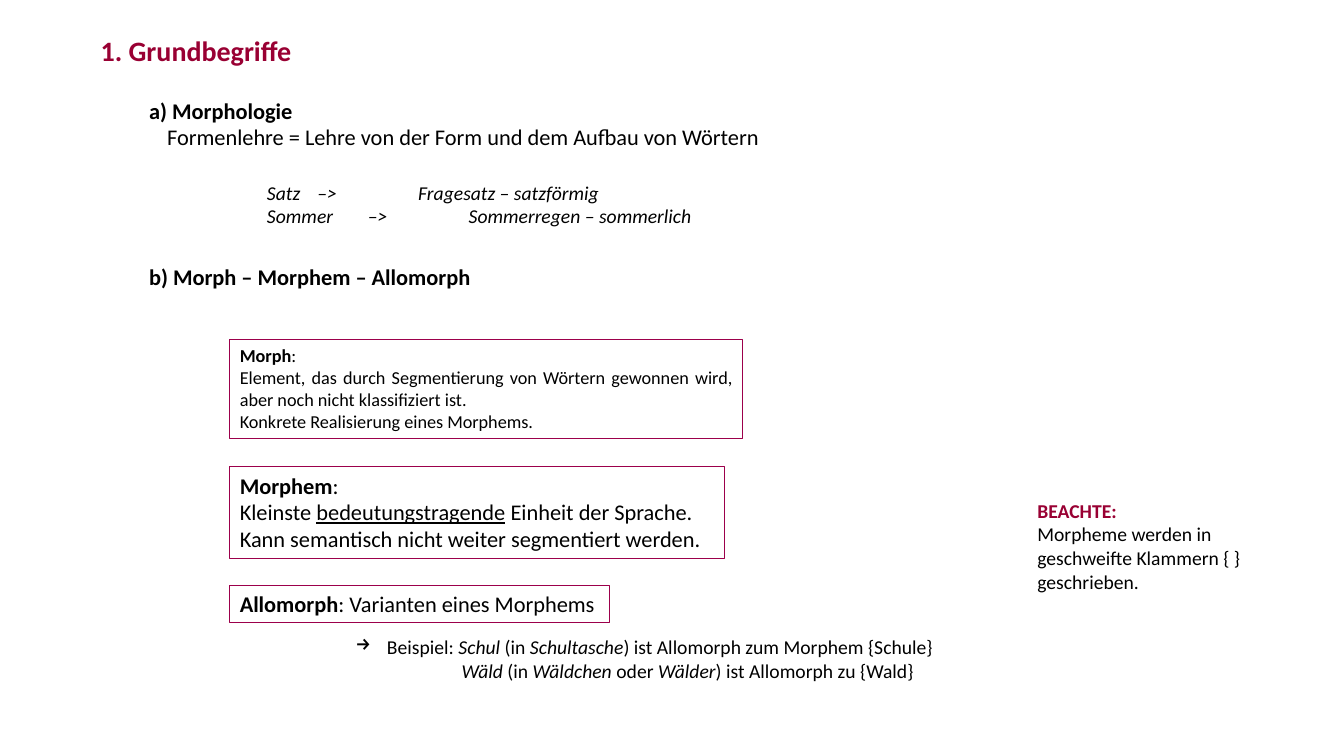
from dataclasses import dataclass

from lxml.etree import SubElement
from pptx import Presentation
from pptx.dml.color import RGBColor
from pptx.enum.shapes import MSO_SHAPE
from pptx.enum.text import MSO_ANCHOR, PP_ALIGN
from pptx.oxml.ns import qn
from pptx.slide import Slide
from pptx.text.text import TextFrame
from pptx.util import Inches, Pt

FONT = "Calibri"
BLACK, CRIMSON, FRAME = "000000", "990033", "9C004B"


@dataclass
class Piece:
    text: str
    bold: bool = False
    italic: bool = False
    underline: bool = False


@dataclass
class Line:
    pieces: list[Piece]
    margin: float = 0
    indent: float = 0
    size: float | None = None
    color: str = BLACK
    space_before: float = 0
    spacing: float = 1
    number: int | None = None
    bullet: str | None = None


@dataclass
class Block:
    left: float
    top: float
    width: float
    height: float
    size: float
    lines: list[Line]
    framed: bool = False
    justified: bool = False
    wrap: bool = True
    anchor: MSO_ANCHOR = MSO_ANCHOR.TOP


def rgb(color: str) -> RGBColor:
    return RGBColor.from_string(color)


def plain(text: str) -> Line:
    return Line([Piece(text)])


def heading(text: str, number: int) -> Line:
    return Line([Piece(text, bold=True)], margin=0.38, indent=-0.18, number=number)


def term(name: str, rest: str) -> Line:
    return Line([Piece(name, bold=True), Piece(rest)])


def word_forms(text: str, space_before: float = 0) -> Line:
    return Line([Piece(text, italic=True)], margin=1.37, size=14, space_before=space_before)


def write_lines(text_frame: TextFrame, block: Block) -> None:
    text_frame.text = "\n".join("" for _ in block.lines)
    for paragraph, line in zip(text_frame.paragraphs, block.lines):
        paragraph.alignment = PP_ALIGN.JUSTIFY if block.justified else PP_ALIGN.LEFT
        paragraph.line_spacing = line.spacing
        paragraph.space_before = Pt(line.space_before)

        # Indents and list marks
        properties = paragraph._p.get_or_add_pPr()
        properties.set("marL", str(Inches(line.margin)))
        properties.set("indent", str(Inches(line.indent)))
        if line.number:
            SubElement(properties, qn("a:buAutoNum"), type="alphaLcParenR", startAt=str(line.number))
        elif line.bullet:
            SubElement(properties, qn("a:buChar"), char=line.bullet)
        else:
            SubElement(properties, qn("a:buNone"))

        for piece in line.pieces:
            run = paragraph.add_run()
            run.text = piece.text
            run.font.name = FONT
            run.font.size = Pt(line.size or block.size)
            run.font.color.rgb = rgb(line.color)
            run.font.bold = piece.bold
            run.font.italic = piece.italic
            run.font.underline = piece.underline


def draw_block(slide: Slide, block: Block) -> None:
    bounds = [Inches(value) for value in (block.left, block.top, block.width, block.height)]
    if block.framed:
        shape = slide.shapes.add_shape(MSO_SHAPE.RECTANGLE, *bounds)
        shape.shadow.inherit = False
        shape.fill.background()
        shape.line.color.rgb = rgb(FRAME)
        shape.line.width = Pt(0.75)
    else:
        shape = slide.shapes.add_textbox(*bounds)
    shape.text_frame.word_wrap = block.wrap
    shape.text_frame.vertical_anchor = block.anchor
    write_lines(shape.text_frame, block)


BLOCKS = [
    # Title
    Block(0.9, 0.32, 7.84, 0.4, 20, [
        Line([Piece("1. Grundbegriffe", bold=True)], color=CRIMSON, spacing=0.9),
    ], anchor=MSO_ANCHOR.BOTTOM),
    # Section a
    Block(1.18, 0.91, 8.74, 1.94, 16, [
        heading(" Morphologie", 1),
        Line([Piece("Formenlehre = Lehre von der Form und dem Aufbau von Wörtern")], margin=0.38),
        word_forms("Satz\t–>\t\tFragesatz – satzförmig", space_before=21.5),
        word_forms("Sommer\t–>\t\tSommerregen – sommerlich"),
    ]),
    # Section b with its framed definitions
    Block(1.18, 2.56, 7.02, 0.37, 16, [heading(" Morph – Morphem – Allomorph", 2)]),
    Block(2.28, 3.37, 5.08, 0.98, 13, [
        term("Morph", ":"),
        plain("Element, das durch Segmentierung von Wörtern gewonnen wird, "
              "aber noch nicht klassifiziert ist."),
        plain("Konkrete Realisierung eines Morphems."),
    ], framed=True, justified=True),
    Block(2.28, 4.63, 4.91, 0.91, 16, [
        term("Morphem", ":"),
        Line([Piece("Kleinste "), Piece("bedeutungstragende", underline=True),
              Piece(" Einheit der Sprache.")]),
        plain("Kann semantisch nicht weiter segmentiert werden."),
    ], framed=True, justified=True),
    Block(2.28, 5.81, 3.77, 0.37, 16, [
        term("Allomorph", ": Varianten eines Morphems"),
    ], framed=True),
    # Side note
    Block(10.19, 4.9, 2.24, 1.04, 14, [
        Line([Piece("BEACHTE:", bold=True)], color=CRIMSON),
        plain("Morpheme werden in"),
        plain("geschweifte Klammern { }"),
        plain("geschrieben."),
    ], wrap=False),
    # Examples
    Block(3.43, 6.25, 6.03, 0.57, 14, [
        Line([Piece("Beispiel: "), Piece("Schul", italic=True), Piece(" (in "),
              Piece("Schultasche", italic=True),
              Piece(") ist Allomorph zum Morphem {Schule}")],
             margin=0.31, indent=-0.31, bullet="→"),
        Line([Piece("Wäld", italic=True), Piece(" (in "), Piece("Wäldchen", italic=True),
              Piece(" oder "), Piece("Wälder", italic=True),
              Piece(") ist Allomorph zu {Wald}")], margin=1.05),
    ]),
]


def main() -> None:
    presentation = Presentation()
    presentation.slide_width = Inches(13.33)
    presentation.slide_height = Inches(7.5)
    slide = presentation.slides.add_slide(presentation.slide_layouts[6])
    for block in BLOCKS:
        draw_block(slide, block)
    presentation.save("out.pptx")


if __name__ == "__main__":
    main()
